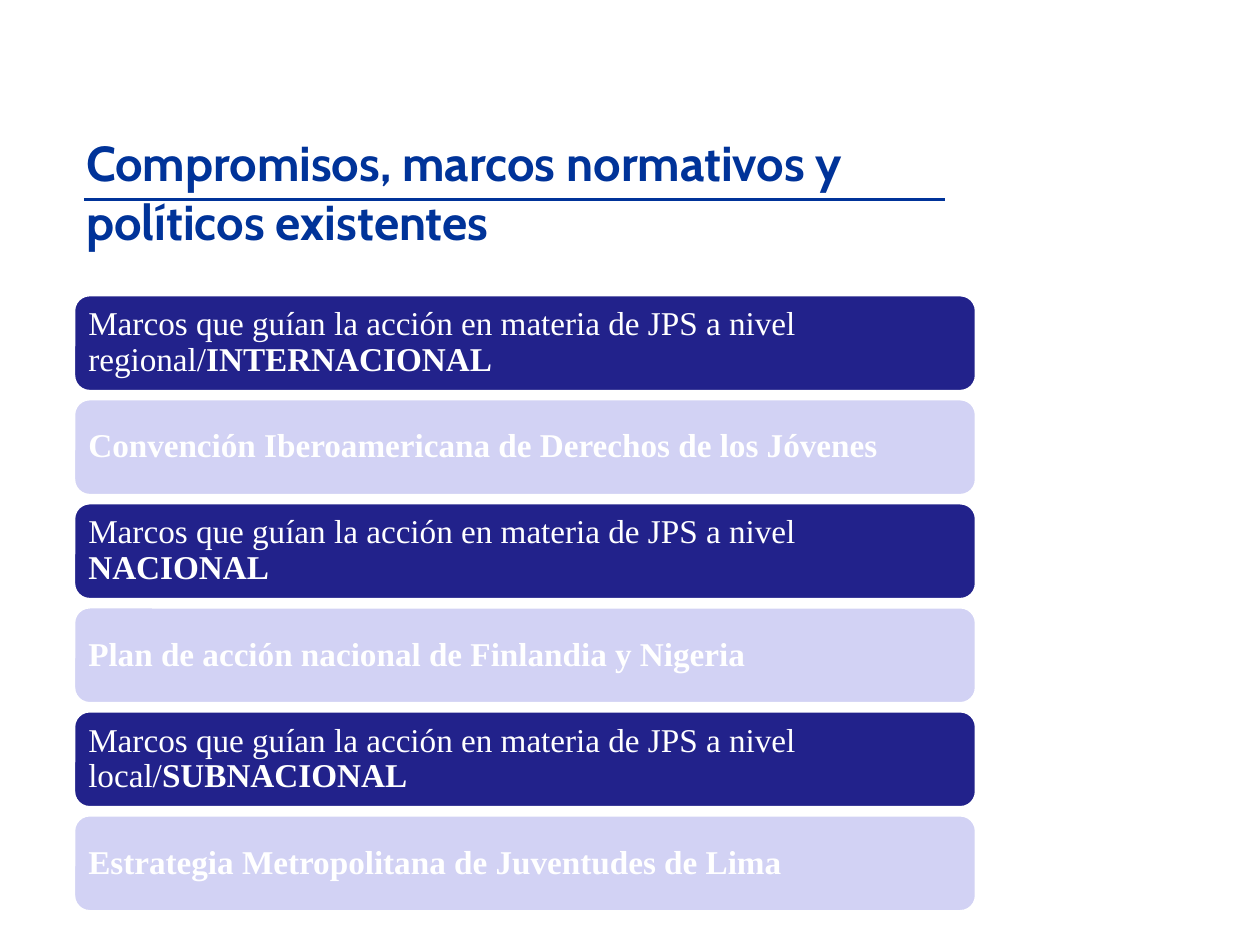
from pptx import Presentation
from pptx.dml.color import RGBColor
from pptx.enum.shapes import MSO_CONNECTOR, MSO_SHAPE
from pptx.enum.text import MSO_ANCHOR, MSO_AUTO_SIZE, PP_ALIGN
from pptx.oxml.ns import qn
from pptx.util import Pt
from lxml.etree import SubElement

BLUE = RGBColor(0x00, 0x33, 0x99)
NAVY = RGBColor(0x22, 0x22, 0x8B)
LILAC = RGBColor(0xD2, 0xD2, 0xF4)
WHITE = RGBColor(0xFF, 0xFF, 0xFF)

TITLE = "Compromisos, marcos normativos y políticos existentes"
GUIDE = "Marcos que guían la acción en materia de JPS a nivel "
LEVELS = [
    ("regional/", "INTERNACIONAL", "Convención Iberoamericana de Derechos de los Jóvenes"),
    ("", "NACIONAL", "Plan de acción nacional de Finlandia y Nigeria"),
    ("local/", "SUBNACIONAL", "Estrategia Metropolitana de Juventudes de Lima"),
]

LEFT, WIDTH = 42, 516
BAR_TOP, BAR_HEIGHT, BAR_PITCH = 168.4, 55.4, 59.45
TITLE_FONT = {"name": "Cabin", "size": Pt(28), "bold": True}
BAR_FONT = {"name": "Times New Roman", "size": Pt(19)}
BAR_FRAME = {"word_wrap": True, "vertical_anchor": MSO_ANCHOR.MIDDLE,
             "margin_left": Pt(5.76), "margin_right": Pt(5.76),
             "margin_top": Pt(5.76), "margin_bottom": Pt(5.76)}
TITLE_FRAME = {"word_wrap": True, "vertical_anchor": MSO_ANCHOR.TOP,
               "auto_size": MSO_AUTO_SIZE.NONE}


def apply(target, values):
    for name, value in values.items():
        setattr(target, name, value)


def add_run(p, text, color, font):
    r = p.add_run()
    r.text = text
    apply(r.font, font)
    r.font.color.rgb = color


def add_bar(s, row, fill, runs):
    sp = s.shapes.add_shape(MSO_SHAPE.ROUNDED_RECTANGLE, Pt(LEFT),
                            Pt(BAR_TOP + row * BAR_PITCH), Pt(WIDTH), Pt(BAR_HEIGHT))
    sp.shadow.inherit = False
    sp.fill.solid()
    sp.fill.fore_color.rgb = fill
    sp.line.color.rgb = WHITE
    sp.line.width = Pt(2)
    tf = sp.text_frame
    apply(tf, BAR_FRAME)
    p = tf.paragraphs[0]
    apply(p, {"alignment": PP_ALIGN.LEFT, "line_spacing": 0.9})
    for text, bold in runs:
        add_run(p, text, WHITE, {**BAR_FONT, "bold": bold})


prs = Presentation()
prs.slide_width, prs.slide_height = Pt(720), Pt(540)
s = prs.slides.add_slide(prs.slide_layouts[5])

title = s.shapes.title
apply(title, {"left": Pt(LEFT), "top": Pt(72), "width": Pt(WIDTH), "height": Pt(78)})
apply(title.text_frame, TITLE_FRAME)
p = title.text_frame.paragraphs[0]
p.alignment = PP_ALIGN.LEFT
add_run(p, TITLE, BLUE, TITLE_FONT)

rule = s.shapes.add_connector(MSO_CONNECTOR.STRAIGHT, Pt(48), Pt(114), Pt(540), Pt(114))
rule.line.color.rgb = BLUE
rule.line.width = Pt(2)
SubElement(rule._element.spPr, qn("a:effectLst"))

for i, (scope, level, example) in enumerate(LEVELS):
    add_bar(s, 2 * i, NAVY, [(GUIDE + scope, False), (level, True)])
    add_bar(s, 2 * i + 1, LILAC, [(example, True)])

prs.save("out.pptx")
